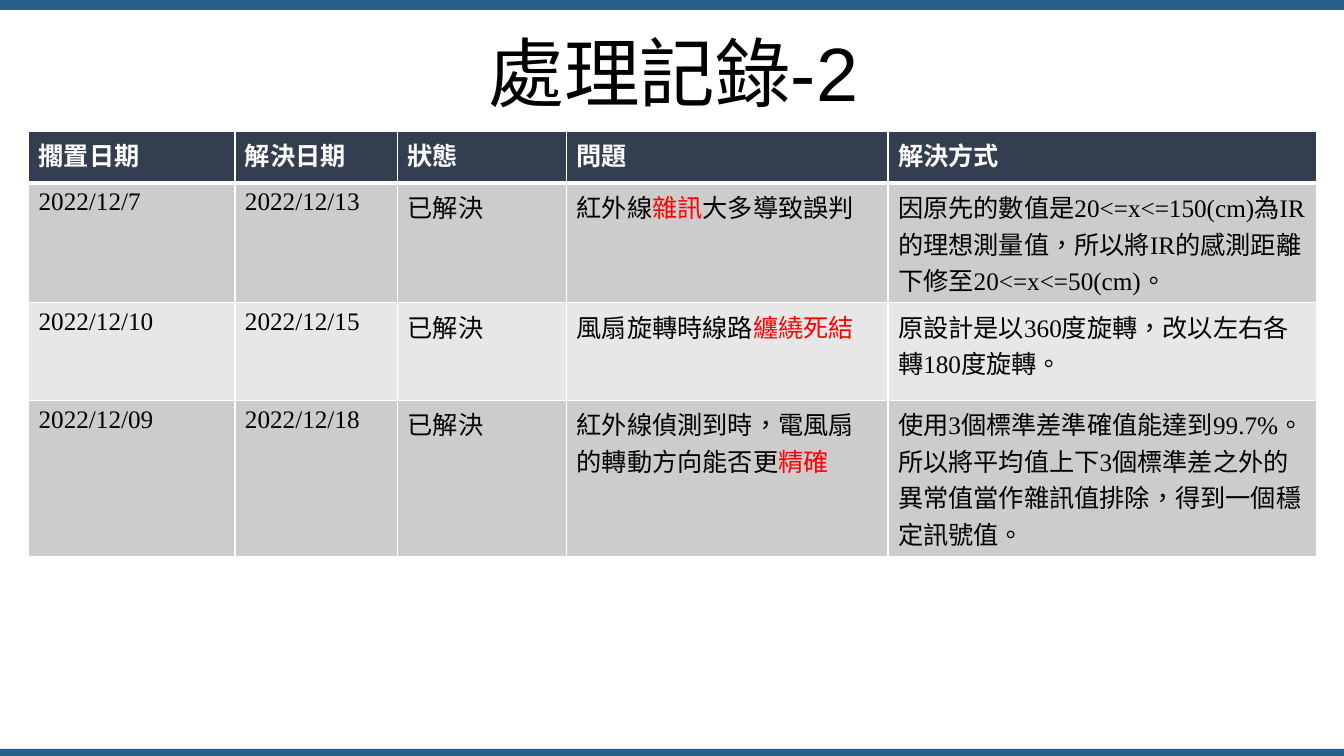
from lxml.etree import SubElement
from pptx import Presentation
from pptx.dml.color import RGBColor
from pptx.enum.lang import MSO_LANGUAGE_ID
from pptx.enum.shapes import MSO_SHAPE
from pptx.enum.text import MSO_ANCHOR, PP_ALIGN
from pptx.oxml.ns import qn
from pptx.util import Cm, Pt

COLORS = {
    "bar": "28608C",
    "header": "333F50",
    "odd_row": "CCCCCC",
    "even_row": "E7E7E7",
    "text": "000000",
    "highlight": "FF0000",
    "white": "FFFFFF",
}
# Text between asterisks is highlighted.
RECORDS = [
    ["擱置日期", "解決日期", "狀態", "問題", "解決方式"],
    ["2022/12/7", "2022/12/13", "已解決", "紅外線*雜訊*大多導致誤判",
     "因原先的數值是20<=x<=150(cm)為IR的理想測量值，所以將IR的感測距離下修至20<=x<=50(cm)。"],
    ["2022/12/10", "2022/12/15", "已解決", "風扇旋轉時線路*纏繞死結*",
     "原設計是以360度旋轉，改以左右各轉180度旋轉。"],
    ["2022/12/09", "2022/12/18", "已解決", "紅外線偵測到時，電風扇的轉動方向能否更*精確*",
     "使用3個標準差準確值能達到99.7%。所以將平均值上下3個標準差之外的異常值當作雜訊值排除，得到一個穩定訊號值。"],
]
COLUMN_WIDTHS = [5.2, 4.1, 4.26, 8.1, 10.79]
ROW_HEIGHTS = [1.31, 1.73, 2.46, 2.51]


def style_run(span, font, size, color, bold=False):
    span.font.name = font
    span.font.size = Pt(size)
    span.font.bold = bold
    span.font.color.rgb = RGBColor.from_string(COLORS[color])
    span.font.language_id = MSO_LANGUAGE_ID.TRADITIONAL_CHINESE


def add_borders(cell, top, bottom):
    """Draw white borders; top and bottom are widths in points."""
    properties = cell._tc.get_or_add_tcPr()
    for side, width in (("L", 1), ("R", 1), ("T", top), ("B", bottom)):
        line = SubElement(properties, qn(f"a:ln{side}"), w=str(Pt(width)))
        fill = SubElement(line, qn("a:solidFill"))
        SubElement(fill, qn("a:srgbClr"), val=COLORS["white"])


deck = Presentation()
deck.slide_width = Cm(33.87)
deck.slide_height = Cm(19.05)
page = deck.slides.add_slide(deck.slide_layouts[5])

for top, height in ((0, 0.25), (18.87, 0.18)):
    bar = page.shapes.add_shape(
        MSO_SHAPE.RECTANGLE, 0, Cm(top), deck.slide_width, Cm(height))
    bar.shadow.inherit = False
    bar.fill.solid()
    bar.fill.fore_color.rgb = RGBColor.from_string(COLORS["bar"])
    bar.line.fill.background()

title = page.shapes.title
title.left, title.top, title.width, title.height = Cm(0.89), Cm(0.94), Cm(32.16), Cm(2.01)
title.text_frame.text = "處理記錄-2"
title.text_frame.vertical_anchor = MSO_ANCHOR.MIDDLE
para = title.text_frame.paragraphs[0]
para.alignment = PP_ALIGN.CENTER
para.line_spacing = 0.9
para.space_before = Pt(10)
style_run(para.runs[0], "Arial", 54, "text")

table = page.shapes.add_table(
    len(RECORDS), len(COLUMN_WIDTHS), Cm(0.72), Cm(3.31),
    Cm(sum(COLUMN_WIDTHS)), Cm(sum(ROW_HEIGHTS))).table
for column, width in zip(table.columns, COLUMN_WIDTHS):
    column.width = Cm(width)
for row, height in zip(table.rows, ROW_HEIGHTS):
    row.height = Cm(height)

for row_index, record in enumerate(RECORDS):
    is_header = row_index == 0
    row_color = "header" if is_header else ("even_row", "odd_row")[row_index % 2]
    text_color = "white" if is_header else "text"
    for column_index, text in enumerate(record):
        cell = table.cell(row_index, column_index)
        add_borders(cell, top=3 if row_index == 1 else 1, bottom=3 if is_header else 1)
        cell.fill.solid()
        cell.fill.fore_color.rgb = RGBColor.from_string(COLORS[row_color])
        para = cell.text_frame.paragraphs[0]
        for part_index, part in enumerate(text.split("*")):
            if part:
                span = para.add_run()
                span.text = part
                color = "highlight" if part_index % 2 else text_color
                style_run(span, "Times New Roman", 18, color, is_header)

deck.save("out.pptx")
